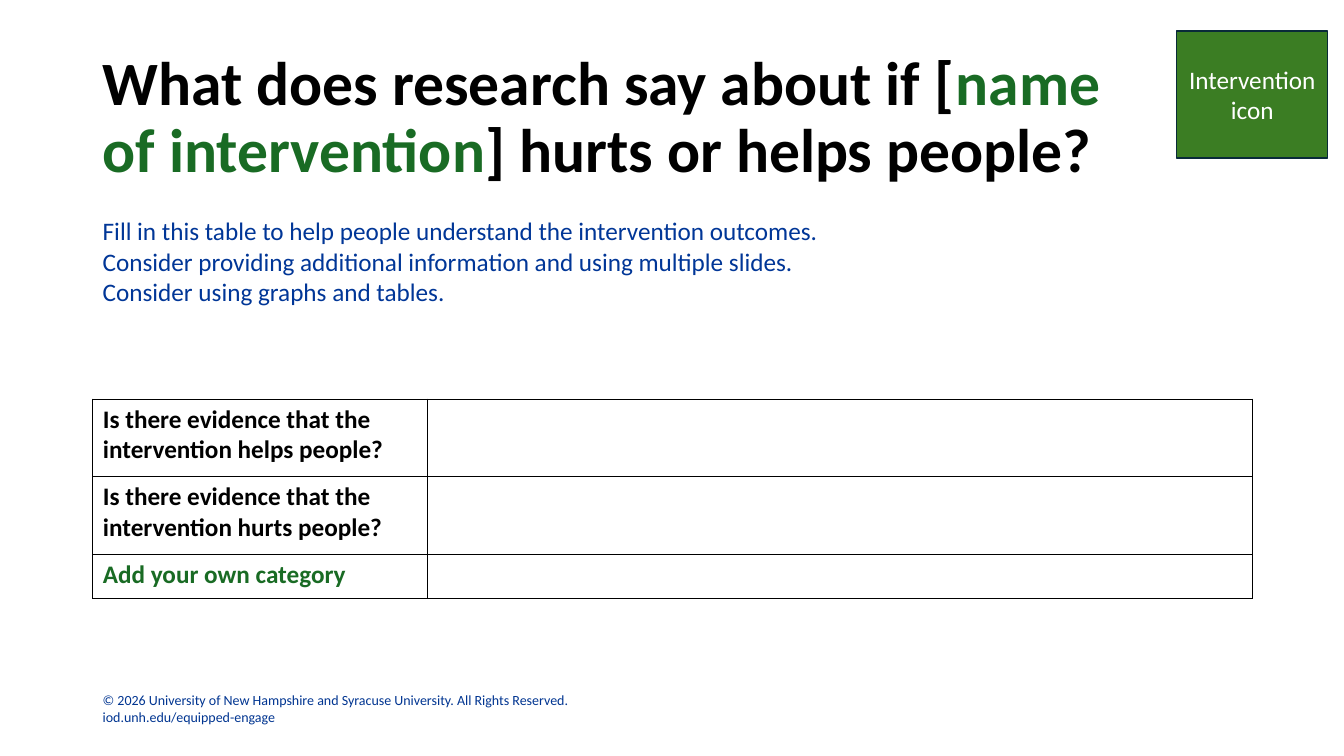
from pptx import Presentation
from pptx.dml.color import RGBColor
from pptx.enum.shapes import MSO_SHAPE
from pptx.enum.text import MSO_ANCHOR, PP_ALIGN
from pptx.oxml import parse_xml
from pptx.oxml.ns import nsdecls
from pptx.util import Inches, Pt

FONT = "Calibri"
BLACK = RGBColor(0x00, 0x00, 0x00)
WHITE = RGBColor(0xFF, 0xFF, 0xFF)
GREEN = RGBColor(0x19, 0x6B, 0x24)
ICON_GREEN = RGBColor(0x3B, 0x7D, 0x23)
ICON_LINE = RGBColor(0x09, 0x2A, 0x39)
HINT_BLUE = RGBColor(0x00, 0x36, 0x97)
FOOTER_BLUE = RGBColor(0x01, 0x35, 0x91)

LEFT = 0.92
COL_WIDTHS = [3.32, 8.18]
ROW_HEIGHTS = [0.77, 0.77, 0.44]
QUESTIONS = [
    ("Is there evidence that the intervention helps people?", BLACK),
    ("Is there evidence that the intervention hurts people?", BLACK),
    ("Add your own category", GREEN),
]
HINTS = [
    "Fill in this table to help people understand the intervention outcomes.",
    "Consider providing additional information and using multiple slides.",
    "Consider using graphs and tables.",
]
FOOTER = [
    "© 2026 University of New Hampshire and Syracuse University. All Rights Reserved.",
    "iod.unh.edu/equipped-engage",
]


def add_run(p, text, size, color, bold=False):
    r = p.add_run()
    r.text = text
    r.font.name = FONT
    r.font.size = Pt(size)
    r.font.bold = bold
    r.font.color.rgb = color


def add_text_frame(s, left, top, width, height, wrap=True):
    box = s.shapes.add_textbox(Inches(left), Inches(top), Inches(width), Inches(height))
    tf = box.text_frame
    tf.word_wrap = wrap
    return tf


def add_title(s):
    tf = add_text_frame(s, LEFT, 0.41, 10.56, 1.48)
    tf.vertical_anchor = MSO_ANCHOR.BOTTOM
    p = tf.paragraphs[0]
    p.line_spacing = 0.9
    add_run(p, "What does research say about if [", 44, BLACK, bold=True)
    add_run(p, "name of intervention", 44, GREEN, bold=True)
    add_run(p, "] hurts or helps people?", 44, BLACK, bold=True)


def add_hints(s):
    tf = add_text_frame(s, LEFT, 2.09, 7.38, 1.01, wrap=False)
    for i, hint in enumerate(HINTS):
        p = tf.add_paragraph() if i else tf.paragraphs[0]
        add_run(p, hint, 18, HINT_BLUE)


def add_footer(s):
    p = add_text_frame(s, LEFT, 6.81, 5.35, 0.44).paragraphs[0]
    for i, line in enumerate(FOOTER):
        if i:
            p.add_line_break()
        add_run(p, line, 10, FOOTER_BLUE)


def add_icon(s):
    sp = s.shapes.add_shape(MSO_SHAPE.RECTANGLE, Inches(11.67), Inches(0.31),
                            Inches(1.5), Inches(1.26))
    sp.shadow.inherit = False
    sp.fill.solid()
    sp.fill.fore_color.rgb = ICON_GREEN
    sp.line.color.rgb = ICON_LINE
    sp.line.width = Pt(1)
    tf = sp.text_frame
    tf.word_wrap = True
    tf.vertical_anchor = MSO_ANCHOR.MIDDLE
    p = tf.paragraphs[0]
    p.alignment = PP_ALIGN.CENTER
    add_run(p, "Intervention icon", 18, WHITE)


def set_cell_borders(cell):
    tc_pr = cell._tc.get_or_add_tcPr()
    for side in ("lnL", "lnR", "lnT", "lnB"):
        tc_pr.append(parse_xml(
            f'<a:{side} {nsdecls("a")} w="{Pt(1)}"><a:solidFill>'
            f'<a:srgbClr val="{BLACK}"/></a:solidFill></a:{side}>'))


def add_evidence_table(s):
    table = s.shapes.add_table(
        len(ROW_HEIGHTS), len(COL_WIDTHS), Inches(LEFT), Inches(3.96),
        Inches(sum(COL_WIDTHS)), Inches(sum(ROW_HEIGHTS))).table
    table.first_row = False
    table.horz_banding = False
    for col, width in zip(table.columns, COL_WIDTHS):
        col.width = Inches(width)
    for row, height, (question, color) in zip(table.rows, ROW_HEIGHTS, QUESTIONS):
        row.height = Inches(height)
        for cell in row.cells:
            set_cell_borders(cell)
            cell.fill.background()
            cell.text_frame.paragraphs[0].font.size = Pt(18)
        add_run(row.cells[0].text_frame.paragraphs[0], question, 18, color, bold=True)


def main():
    prs = Presentation()
    prs.slide_width = Inches(13.33)
    prs.slide_height = Inches(7.5)
    s = prs.slides.add_slide(prs.slide_layouts[6])
    add_footer(s)
    add_title(s)
    add_evidence_table(s)
    add_hints(s)
    add_icon(s)
    prs.save("out.pptx")


if __name__ == "__main__":
    main()
